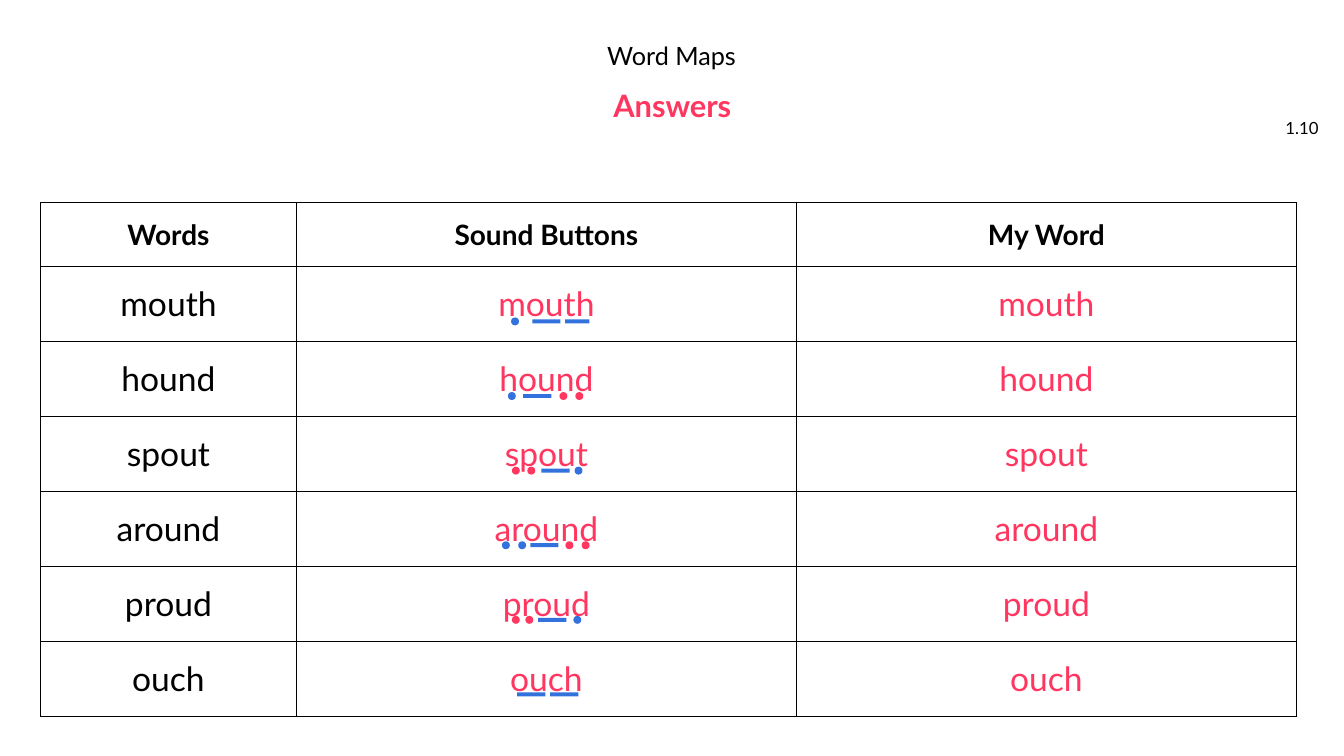
from lxml.etree import SubElement
from pptx import Presentation
from pptx.dml.color import RGBColor
from pptx.enum.shapes import MSO_SHAPE
from pptx.enum.text import MSO_ANCHOR, PP_ALIGN
from pptx.oxml.ns import qn
from pptx.util import Cm, Pt

FONT = "Lato"
BLACK, WHITE, PINK, BLUE = "000000", "FFFFFF", "FF3760", "3372DC"
HEADINGS = ["Words", "Sound Buttons", "My Word"]
DOT_SIZE = 0.2
BAR_HEIGHT = 0.1
BAR, SHORT_BAR = 0.71, 0.61
FIRST_BUTTON_ROW, BUTTON_ROW_STEP = 8.1, 1.88

BLUE_DOT, PINK_DOT = (DOT_SIZE, BLUE), (DOT_SIZE, PINK)
LONG_LINE, SHORT_LINE = (BAR, BLUE), (SHORT_BAR, BLUE)
SOUND_BUTTONS = {
    "mouth": [(12.98, BLUE_DOT), (13.77, LONG_LINE), (14.55, SHORT_LINE)],
    "hound": [(12.9, BLUE_DOT), (13.54, LONG_LINE), (14.2, PINK_DOT), (14.6, PINK_DOT)],
    "spout": [(13, PINK_DOT), (13.39, PINK_DOT), (14, LONG_LINE), (14.58, BLUE_DOT)],
    "around": [(12.75, BLUE_DOT), (13.16, BLUE_DOT), (13.72, LONG_LINE),
               (14.35, PINK_DOT), (14.76, PINK_DOT)],
    "proud": [(13, PINK_DOT), (13.34, PINK_DOT), (13.92, LONG_LINE), (14.55, BLUE_DOT)],
    "ouch": [(13.39, LONG_LINE), (14.22, LONG_LINE)],
}


def rgb(color):
    return RGBColor.from_string(color)


def write_text(text_frame, text, size, color=BLACK, bold=False, align=PP_ALIGN.CENTER):
    text_frame.text = text
    text_frame.word_wrap = True
    paragraph = text_frame.paragraphs[0]
    paragraph.alignment = align
    font = paragraph.runs[0].font
    font.name = FONT
    font.size = Pt(size)
    font.bold = bold
    font.color.rgb = rgb(color)


def place_title(slide, text):
    title = slide.shapes.title
    title.left, title.top, title.width, title.height = Cm(9.7), Cm(0.94), Cm(14.45), Cm(0.9)
    write_text(title.text_frame, text, 18)
    title.text_frame.vertical_anchor = MSO_ANCHOR.MIDDLE


def add_label(slide, left, top, width, text, size, **style):
    box = slide.shapes.add_textbox(Cm(left), Cm(top), Cm(width), Cm(1.02))
    write_text(box.text_frame, text, size, **style)
    box.text_frame.vertical_anchor = MSO_ANCHOR.MIDDLE


def add_borders(cell):
    properties = cell._tc.get_or_add_tcPr()
    for side in ("a:lnL", "a:lnR", "a:lnT", "a:lnB"):
        line = SubElement(properties, qn(side), w=str(Pt(1)))
        fill = SubElement(line, qn("a:solidFill"))
        SubElement(fill, qn("a:srgbClr"), val=BLACK)


def format_cell(cell, text, size, color, bold):
    add_borders(cell)
    cell.fill.solid()
    cell.fill.fore_color.rgb = rgb(WHITE)
    cell.vertical_anchor = MSO_ANCHOR.MIDDLE
    write_text(cell.text_frame, text, size, color, bold)


def add_word_table(slide):
    frame = slide.shapes.add_table(
        len(SOUND_BUTTONS) + 1, len(HEADINGS), Cm(1.02), Cm(5.11), Cm(31.65), Cm(12.94))
    table = frame.table
    table.first_row = False
    table.horz_banding = False
    for column, width in zip(table.columns, (6.45, 12.6, 12.6)):
        column.width = Cm(width)
    for row in table.rows:
        row.height = Cm(1.89)
    table.rows[0].height = Cm(1.6)
    for column, heading in enumerate(HEADINGS):
        format_cell(table.cell(0, column), heading, 20, BLACK, True)
        for row, word in enumerate(SOUND_BUTTONS, start=1):
            color = PINK if column else BLACK
            format_cell(table.cell(row, column), word, 24, color, False)


def add_sound_button(slide, center_x, center_y, width, color):
    is_dot = width == DOT_SIZE
    kind = MSO_SHAPE.OVAL if is_dot else MSO_SHAPE.RECTANGLE
    height = DOT_SIZE if is_dot else BAR_HEIGHT
    shape = slide.shapes.add_shape(
        kind, Cm(center_x - width / 2), Cm(center_y - height / 2), Cm(width), Cm(height))
    shape.shadow.inherit = False
    shape.fill.solid()
    shape.fill.fore_color.rgb = rgb(color)
    shape.line.fill.background()


def main():
    presentation = Presentation()
    presentation.slide_width = Cm(33.87)
    presentation.slide_height = Cm(19.05)
    slide = presentation.slides.add_slide(presentation.slide_layouts[5])
    place_title(slide, "Word Maps")
    add_label(slide, 5.31, 2.13, 23.27, "Answers", 22, color=PINK, bold=True)
    add_label(slide, 31.88, 2.72, 1.6, "1.10", 12, align=PP_ALIGN.RIGHT)
    add_word_table(slide)
    for row, buttons in enumerate(SOUND_BUTTONS.values()):
        center_y = FIRST_BUTTON_ROW + row * BUTTON_ROW_STEP
        for center_x, (width, color) in buttons:
            add_sound_button(slide, center_x, center_y, width, color)
    presentation.save("out.pptx")


if __name__ == "__main__":
    main()
